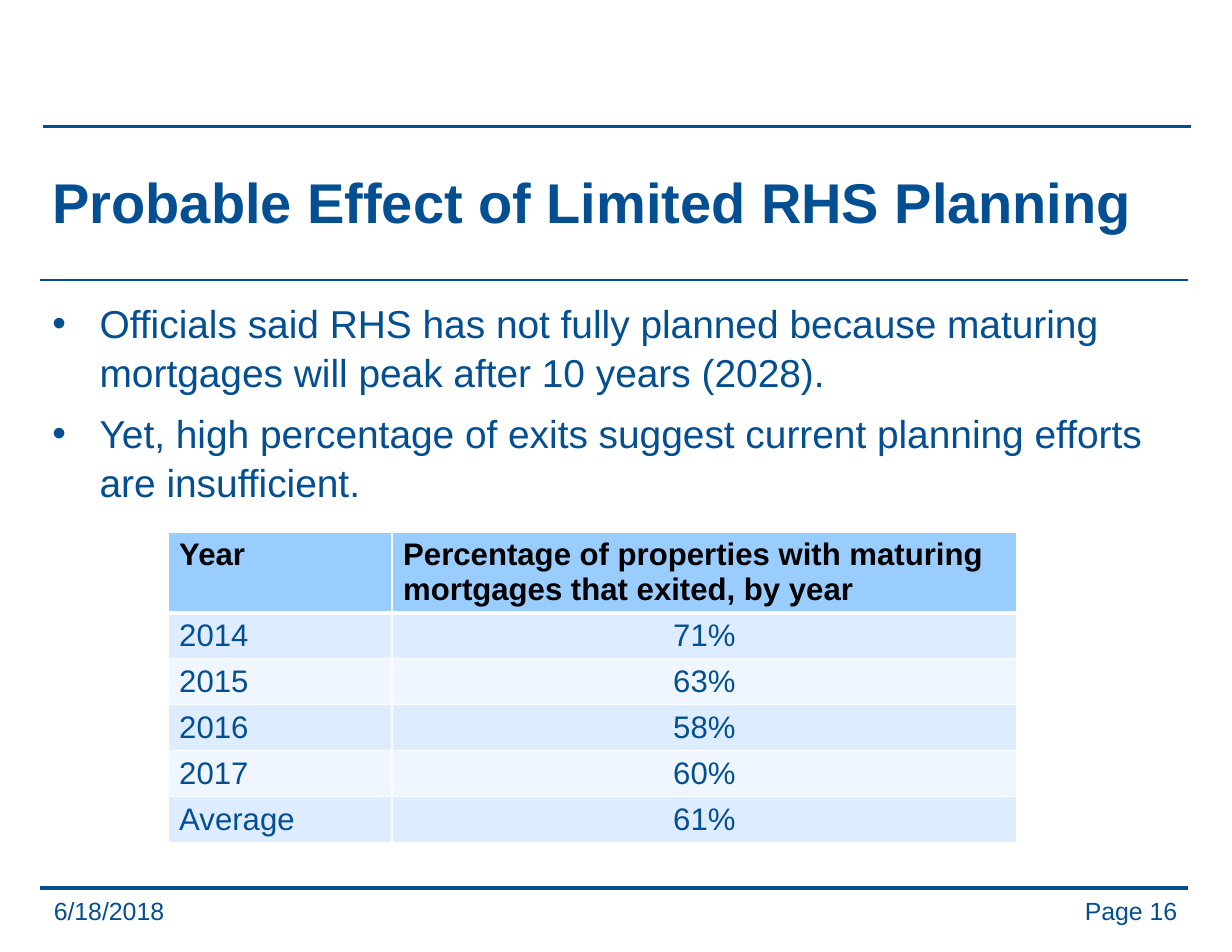
from dataclasses import dataclass

from lxml.etree import SubElement
from pptx import Presentation
from pptx.dml.color import RGBColor
from pptx.enum.shapes import MSO_CONNECTOR
from pptx.enum.text import MSO_ANCHOR, MSO_AUTO_SIZE, PP_ALIGN
from pptx.oxml.ns import qn
from pptx.util import Cm, Pt

TITLE = "Probable Effect of Limited RHS Planning"
BULLETS = [
    "Officials said RHS has not fully planned because maturing mortgages will peak after 10 years (2028).",
    "Yet, high percentage of exits suggest current planning efforts are insufficient.",
]
EXIT_RATES = [
    ("Year", "Percentage of properties with maturing mortgages that exited, by year"),
    ("2014", "71%"),
    ("2015", "63%"),
    ("2016", "58%"),
    ("2017", "60%"),
    ("Average", "61%"),
]
FOOTERS = [
    ("6/18/2018", 0.94, 5.72, PP_ALIGN.LEFT),
    ("Page 16", 20.45, 6.53, PP_ALIGN.RIGHT),
]
RULES = [(0.97, 2.87, 2.5), (0.91, 20.14, 2.5), (0.91, 6.35, 1.5)]
CONTENT_LEFT, CONTENT_WIDTH = 0.91, 26.04
COLUMN_WIDTHS = (5.08, 14.17)
HEADER_HEIGHT, ROW_HEIGHT = 1.8, 1.04


@dataclass(frozen=True)
class Theme:
    font: str = "Arial"
    blue: str = "044F91"
    black: str = "000000"
    white: str = "FFFFFF"
    header: str = "99CCFF"
    bands: tuple = ("DEECFF", "EFF6FF")
    title_size: int = 36
    body_size: int = 25
    table_size: int = 20
    footer_size: int = 16


theme = Theme()


def add_text(paragraph, text, size, color=theme.blue, bold=False):
    run = paragraph.add_run()
    run.text = text
    run.font.name = theme.font
    run.font.size = Pt(size)
    run.font.bold = bold
    run.font.color.rgb = RGBColor.from_string(color)


def place(shape, left, top, width, height):
    shape.left, shape.top = Cm(left), Cm(top)
    shape.width, shape.height = Cm(width), Cm(height)


def format_frame(frame, anchor):
    frame.word_wrap = True
    frame.auto_size = MSO_AUTO_SIZE.NONE
    frame.vertical_anchor = anchor
    frame.margin_left = frame.margin_right = Cm(0.28)
    frame.margin_top = frame.margin_bottom = Cm(0.15)


def add_rule(slide, left, top, weight):
    rule = slide.shapes.add_connector(
        MSO_CONNECTOR.STRAIGHT, Cm(left), Cm(top), Cm(left + CONTENT_WIDTH), Cm(top))
    rule.line.color.rgb = RGBColor.from_string(theme.blue)
    rule.line.width = Pt(weight)
    SubElement(rule._element.spPr, qn("a:effectLst"))


def add_footer(slide, text, left, width, alignment):
    box = slide.shapes.add_textbox(Cm(left), Cm(20.17), Cm(width), Cm(0.98))
    format_frame(box.text_frame, MSO_ANCHOR.MIDDLE)
    paragraph = box.text_frame.paragraphs[0]
    paragraph.alignment = alignment
    add_text(paragraph, text, theme.footer_size)


def fill_title(title):
    place(title, CONTENT_LEFT, 3.12, CONTENT_WIDTH, 2.87)
    format_frame(title.text_frame, MSO_ANCHOR.MIDDLE)
    paragraph = title.text_frame.paragraphs[0]
    paragraph.alignment = PP_ALIGN.LEFT
    add_text(paragraph, TITLE, theme.title_size, bold=True)


def fill_body(body):
    place(body, CONTENT_LEFT, 6.6, CONTENT_WIDTH, 13.31)
    frame = body.text_frame
    format_frame(frame, MSO_ANCHOR.TOP)
    for index, text in enumerate(BULLETS):
        paragraph = frame.add_paragraph() if index else frame.paragraphs[0]
        properties = paragraph._p.get_or_add_pPr()
        properties.set("marL", str(Cm(1.07)))
        properties.set("indent", str(-Cm(1.07)))
        SubElement(properties, qn("a:buFont")).set("typeface", theme.font)
        SubElement(properties, qn("a:buChar")).set("char", "•")
        paragraph.space_before = Pt(7.5 if index else 0)
        paragraph.line_spacing = 1.05
        add_text(paragraph, text, theme.body_size)


def set_borders(cell, bottom):
    properties = cell._tc.get_or_add_tcPr()
    for side, weight in (("L", 1), ("R", 1), ("T", 1), ("B", bottom)):
        border = SubElement(properties, qn(f"a:ln{side}"), w=str(Pt(weight)))
        fill = SubElement(border, qn("a:solidFill"))
        SubElement(fill, qn("a:srgbClr"), val=theme.white)


def add_exit_table(slide):
    body_rows = len(EXIT_RATES) - 1
    table = slide.shapes.add_table(
        len(EXIT_RATES), len(COLUMN_WIDTHS), Cm(3.81), Cm(12.07),
        Cm(sum(COLUMN_WIDTHS)), Cm(HEADER_HEIGHT + body_rows * ROW_HEIGHT)).table
    for column, width in zip(table.columns, COLUMN_WIDTHS):
        column.width = Cm(width)
    for row_index, values in enumerate(EXIT_RATES):
        is_header = row_index == 0
        table.rows[row_index].height = Cm(HEADER_HEIGHT if is_header else ROW_HEIGHT)
        fill = theme.header if is_header else theme.bands[(row_index - 1) % 2]
        for column_index, text in enumerate(values):
            cell = table.cell(row_index, column_index)
            set_borders(cell, 3 if is_header else 1)
            cell.fill.solid()
            cell.fill.fore_color.rgb = RGBColor.from_string(fill)
            paragraph = cell.text_frame.paragraphs[0]
            centered = column_index and not is_header
            paragraph.alignment = PP_ALIGN.CENTER if centered else PP_ALIGN.LEFT
            add_text(paragraph, text, theme.table_size,
                     theme.black if is_header else theme.blue, is_header)


def main():
    presentation = Presentation()
    presentation.slide_width, presentation.slide_height = Cm(27.94), Cm(21.59)
    slide = presentation.slides.add_slide(presentation.slide_layouts[1])
    for rule in RULES:
        add_rule(slide, *rule)
    for footer in FOOTERS:
        add_footer(slide, *footer)
    fill_title(slide.shapes.title)
    fill_body(slide.placeholders[1])
    add_exit_table(slide)
    presentation.save("out.pptx")


if __name__ == "__main__":
    main()
